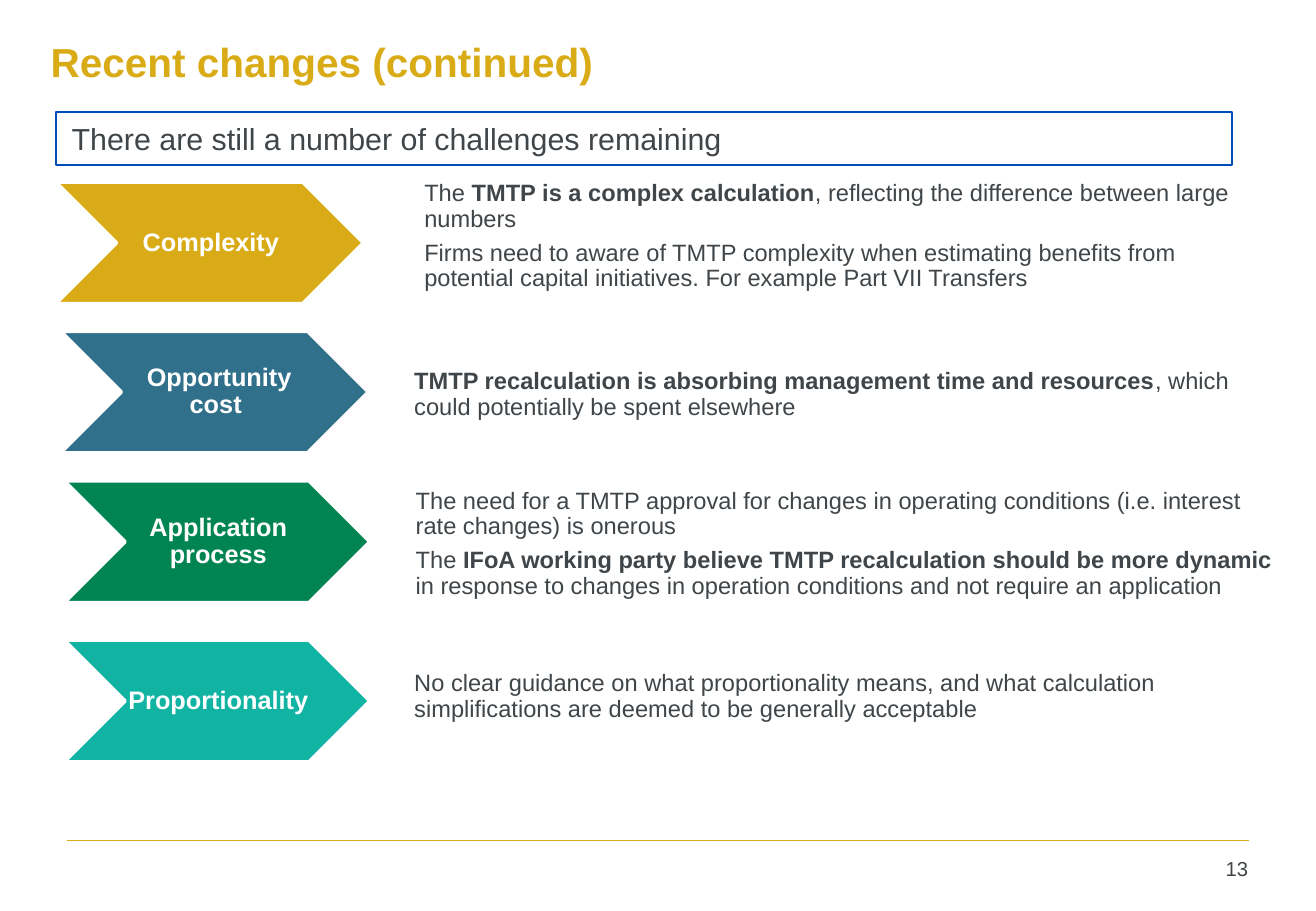
from dataclasses import dataclass

from lxml import etree
from pptx import Presentation
from pptx.dml.color import RGBColor
from pptx.enum.shapes import MSO_CONNECTOR, MSO_SHAPE
from pptx.enum.text import MSO_ANCHOR, PP_ALIGN
from pptx.oxml.ns import qn
from pptx.slide import Slide
from pptx.text.text import TextFrame
from pptx.util import Cm, Pt

CHEVRON, RECTANGLE = MSO_SHAPE.CHEVRON, MSO_SHAPE.RECTANGLE
STRAIGHT = MSO_CONNECTOR.STRAIGHT
TOP, MIDDLE = MSO_ANCHOR.TOP, MSO_ANCHOR.MIDDLE
LEFT, CENTER, RIGHT = PP_ALIGN.LEFT, PP_ALIGN.CENTER, PP_ALIGN.RIGHT

COLORS = {
    "gold": "D9AB16",
    "blue": "30708A",
    "green": "008452",
    "teal": "11B3A2",
    "border": "004CB6",
    "text": "3F4548",
    "white": "FFFFFF",
}
FONT = "Arial"
CHEVRON_HEIGHT = 2.54
LABEL_INSET = 1.27
DETAIL_HEIGHT = 2.64
LABEL_MARGINS = (0.05, 0.03, 0, 0.03)
DETAIL_MARGINS = (0.51, 0.03, 0.51, 0.03)
DEFAULT_MARGINS = (0.25, 0.13, 0.25, 0.13)

Box = tuple[float, float, float, float]
Paragraph = list[tuple[str, bool]]


@dataclass(frozen=True)
class TextStyle:
    size: float
    color: str = "text"
    align: PP_ALIGN = LEFT
    anchor: MSO_ANCHOR = MIDDLE
    margins: Box = DEFAULT_MARGINS
    line_spacing: float = 1.0
    space_after: float = 0


@dataclass(frozen=True)
class Challenge:
    label: str
    color: str
    left: float
    top: float
    width: float
    detail_left: float
    detail_top: float
    detail_width: float
    detail: list[Paragraph]


TITLE = TextStyle(24, "gold")
BANNER = TextStyle(18, margins=(0.33, 0.18, 0.33, 0.18))
PAGE_NUMBER = TextStyle(12, align=RIGHT, anchor=TOP)
LABEL = TextStyle(15, "white", CENTER, MIDDLE, LABEL_MARGINS, 0.9, 5)
DETAIL = TextStyle(14, margins=DETAIL_MARGINS, line_spacing=0.9, space_after=5)

CHALLENGES = [
    Challenge("Complexity", "gold", 1.17, 3.81, 6.43, 8.36, 3.63, 18.19, [
        [("The ", False), ("TMTP is a complex calculation", True),
         (", reflecting the difference between large numbers", False)],
        [("Firms need to aware of TMTP complexity when estimating benefits from "
          "potential capital initiatives. For example Part VII Transfers", False)],
    ]),
    Challenge(" Opportunity cost", "blue", 1.27, 6.93, 6.43, 8.15, 6.94, 18.59, [
        [("TMTP recalculation is absorbing management time and resources", True),
         (", which could potentially be spent elsewhere", False)],
    ]),
    Challenge("Application process", "green", 1.35, 10.06, 6.38, 8.18, 10.06, 19, [
        [("The need for a TMTP approval for changes in operating conditions "
          "(i.e. interest rate changes) is onerous", False)],
        [("The ", False),
         ("IFoA working party believe TMTP recalculation should be more dynamic ", True),
         ("in response to changes in operation conditions and not require an "
          "application", False)],
    ]),
    Challenge("Proportionality", "teal", 1.35, 13.39, 6.38, 8.15, 13.25, 19.2, [
        [("No clear guidance on what proportionality means, and what calculation "
          "simplifications are deemed to be generally acceptable", False)],
    ]),
]


def rgb(name: str) -> RGBColor:
    return RGBColor.from_string(COLORS[name])


def write(frame: TextFrame, paragraphs: list[Paragraph], style: TextStyle) -> None:
    frame.word_wrap = True
    frame.vertical_anchor = style.anchor
    (frame.margin_left, frame.margin_top,
     frame.margin_right, frame.margin_bottom) = map(Cm, style.margins)
    for index, pieces in enumerate(paragraphs):
        paragraph = frame.add_paragraph() if index else frame.paragraphs[0]
        paragraph.alignment = style.align
        paragraph.line_spacing = style.line_spacing
        paragraph.space_after = Pt(style.space_after)
        for text, bold in pieces:
            run = paragraph.add_run()
            run.text = text
            run.font.name = FONT
            run.font.size = Pt(style.size)
            run.font.bold = bold
            run.font.color.rgb = rgb(style.color)


def add_text(slide: Slide, box: Box, paragraphs: list[Paragraph],
             style: TextStyle) -> None:
    textbox = slide.shapes.add_textbox(*map(Cm, box))
    write(textbox.text_frame, paragraphs, style)


def add_banner(slide: Slide) -> None:
    banner = slide.shapes.add_shape(RECTANGLE, Cm(1.17), Cm(2.34), Cm(24.59), Cm(1.12))
    banner.shadow.inherit = False
    banner.fill.background()
    banner.line.color.rgb = rgb("border")
    banner.line.width = Pt(1.25)
    write(banner.text_frame,
          [[("There are still a number of challenges remaining", False)]], BANNER)


def add_challenge(slide: Slide, item: Challenge) -> None:
    """Draws the chevron, its label and the explanation beside it."""
    arrow = slide.shapes.add_shape(
        CHEVRON, Cm(item.left), Cm(item.top), Cm(item.width), Cm(CHEVRON_HEIGHT))
    arrow.shadow.inherit = False
    arrow.fill.solid()
    arrow.fill.fore_color.rgb = rgb(item.color)
    arrow.line.color.rgb = rgb("white")
    arrow.line.width = Pt(2)
    label_box = (item.left + LABEL_INSET, item.top,
                 item.width - 2 * LABEL_INSET, CHEVRON_HEIGHT)
    add_text(slide, label_box, [[(item.label, True)]], LABEL)
    detail_box = (item.detail_left, item.detail_top, item.detail_width, DETAIL_HEIGHT)
    add_text(slide, detail_box, item.detail, DETAIL)


def add_footer(slide: Slide) -> None:
    rule = slide.shapes.add_connector(STRAIGHT, Cm(1.4), Cm(17.58), Cm(26.11), Cm(17.58))
    rule.line.color.rgb = rgb("gold")
    rule.line.width = Pt(1)
    etree.SubElement(rule._element.spPr, qn("a:effectLst"))
    add_text(slide, (24.38, 17.78, 1.96, 0.94), [[("13", False)]], PAGE_NUMBER)


def main() -> None:
    presentation = Presentation()
    presentation.slide_width = Cm(27.51)
    presentation.slide_height = Cm(19.05)
    slide = presentation.slides.add_slide(presentation.slide_layouts[6])
    add_footer(slide)
    add_text(slide, (0.81, 0, 24.94, 2.57),
             [[("Recent changes (continued)", True)]], TITLE)
    add_banner(slide)
    for challenge in CHALLENGES:
        add_challenge(slide, challenge)
    presentation.save("out.pptx")


if __name__ == "__main__":
    main()
